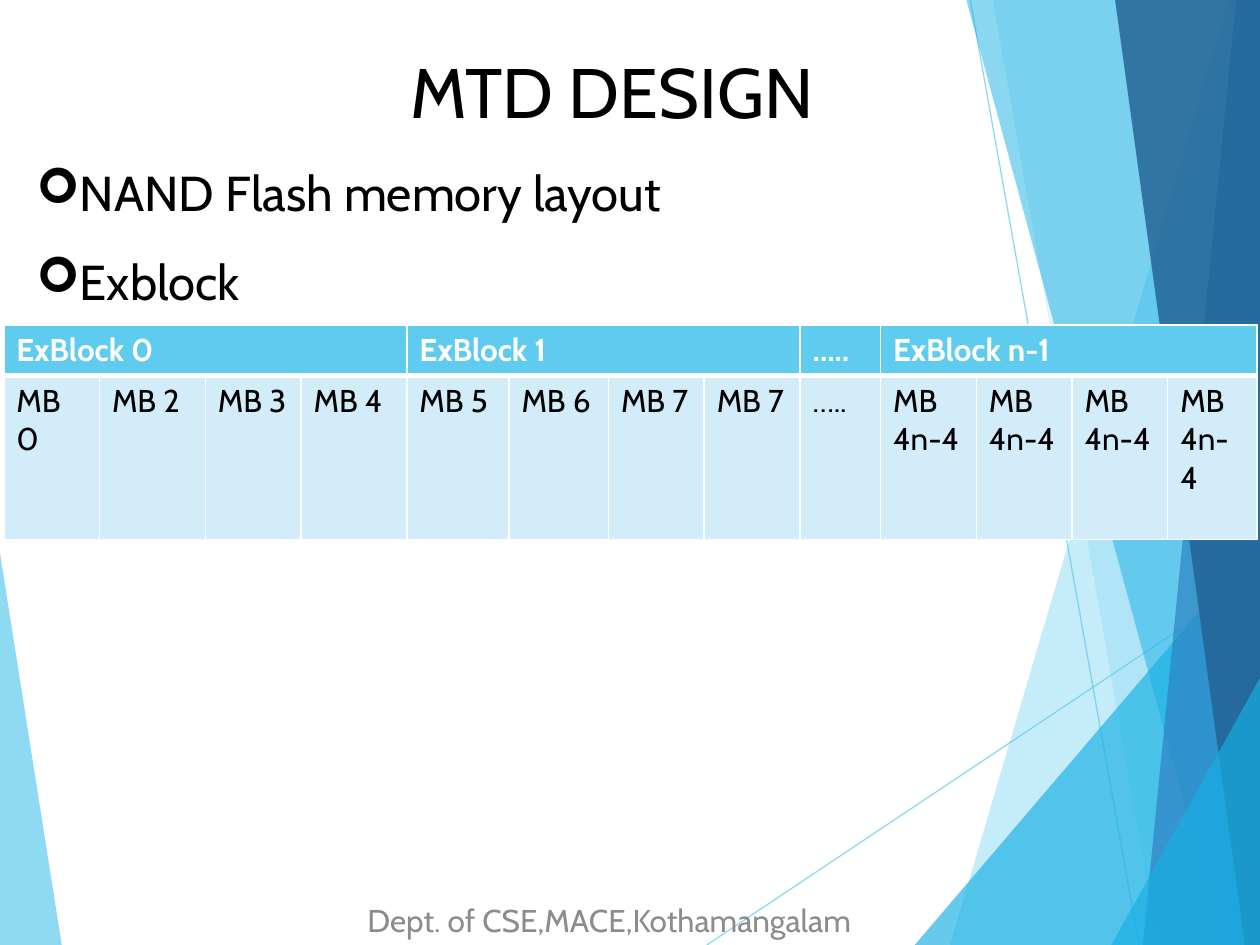
from lxml import etree
from pptx import Presentation
from pptx.dml.color import RGBColor
from pptx.enum.text import MSO_ANCHOR, PP_ALIGN
from pptx.oxml.ns import qn
from pptx.util import Inches, Pt

CENTER, LEFT = PP_ALIGN.CENTER, PP_ALIGN.LEFT
MIDDLE = MSO_ANCHOR.MIDDLE
FONT = "Cabin"
SKY, CYAN, BLUE, NAVY = "5FCBEF", "17B0E4", "2E83C3", "226292"
WHITE, BLACK, GRAY, PALE = "FFFFFF", "000000", "8C8C8C", "D2ECF9"

# Points, colour and opacity of each facet, back to front
FACETS = [
    ([(0, 4.39), (0.49, 7.5), (0, 7.5)], SKY, 70),
    ([(9.75, 0), (7.54, 7.5), (10, 7.5), (10, 0)], SKY, 36),
    ([(7.88, 0), (9.19, 7.5), (10, 7.5), (10, 0)], SKY, 20),
    ([(7.26, 7.5), (10, 4.29), (10, 7.5)], CYAN, 66),
    ([(7.67, 0), (9.7, 7.5), (10, 7.5), (10, 0)], CYAN, 50),
    ([(9.81, 0), (9.07, 7.5), (10, 7.5), (10, 0)], BLUE, 70),
    ([(8.85, 0), (9.88, 7.5), (10, 7.5), (10, 0)], NAVY, 82),
    ([(8.82, 7.5), (10, 5.38), (10, 7.5)], CYAN, 66),
]
RAYS = [(5.61, 7.5, 10, 4.57), (7.7, 0, 9.04, 7.5)]

WIDTHS = [0.76, 0.84, 0.76, 0.84, 0.81, 0.79, 0.76, 0.76, 0.64,
          0.76, 0.76, 0.76, 0.71]
HEIGHTS = [0.4, 1.3]
HEADS = [("ExBlock 0", 4), ("ExBlock 1", 4), ("…..", 1), ("ExBlock n-1", 4)]
BLOCKS = ["MB 0", "MB 2", "MB 3", "MB 4", "MB 5", "MB 6", "MB 7", "MB 7",
          "…..", "MB\n4n-4", "MB 4n-4", "MB 4n-4", "MB 4n-4"]


def paint(fill, color, alpha=100):
    fill.solid()
    fill.fore_color.rgb = RGBColor.from_string(color)
    if alpha < 100:
        tint = fill._xPr.find(qn("a:solidFill"))[0]
        etree.SubElement(tint, qn("a:alpha"), val=str(alpha * 1000))


def style(para, size, color, bold=False, align=LEFT):
    para.alignment = align
    font = para.font
    font.name, font.size, font.bold = FONT, Pt(size), bold
    font.color.rgb = RGBColor.from_string(color)


def place(shape, box):
    shape.left, shape.top, shape.width, shape.height = map(Inches, box)


def add_facet(shapes, points, color, alpha):
    dots = [(Inches(x), Inches(y)) for x, y in points]
    pen = shapes.build_freeform(*dots[0])
    pen.add_line_segments(dots[1:], close=True)
    facet = pen.convert_to_shape()
    facet.shadow.inherit = False
    facet.line.fill.background()
    paint(facet.fill, color, alpha)


def add_ray(shapes, ends):
    ray = shapes.add_connector(1, *map(Inches, ends))
    ray.line.width = Pt(0.75)
    paint(ray.line.fill, SKY, 70)
    etree.SubElement(ray._element.spPr, qn("a:effectLst"))


def add_decor(shapes):
    add_facet(shapes, *FACETS[0])
    for ends in RAYS:
        add_ray(shapes, ends)
    for facet in FACETS[1:]:
        add_facet(shapes, *facet)


def set_title(shapes, text, box):
    title = shapes.title
    place(title, box)
    title.text_frame.text = text
    title.text_frame.vertical_anchor = MIDDLE
    style(title.text_frame.paragraphs[0], 40, BLACK, align=CENTER)
    # Bring the title in front of the decoration
    shapes._spTree.append(title._element)


def add_text(shapes, text, box):
    frame = shapes.add_textbox(*map(Inches, box)).text_frame
    frame.word_wrap = True
    frame.text = text
    return frame


def add_list(shapes, items, box):
    frame = add_text(shapes, "\n".join(items), box)
    for para in frame.paragraphs:
        style(para, 28, BLACK)
        para.line_spacing = 1.5
        props = para._p.get_or_add_pPr()
        props.set("marL", str(Inches(0.31)))
        props.set("indent", str(-Inches(0.31)))
        etree.SubElement(props, qn("a:buFont"), typeface="Wingdings")
        etree.SubElement(props, qn("a:buChar"), char="➢")
        # Bullet marks come before the default run format
        props.append(props.find(qn("a:defRPr")))


def add_footer(shapes, text, box):
    frame = add_text(shapes, text, box)
    frame.vertical_anchor = MIDDLE
    style(frame.paragraphs[0], 18, GRAY, align=CENTER)


def edge(cell, base):
    props = cell._tc.get_or_add_tcPr()
    for side, width in zip("LRTB", (1, 1, 1, base)):
        line = etree.SubElement(props, qn("a:ln" + side), w=str(Pt(width)))
        fill = etree.SubElement(line, qn("a:solidFill"))
        etree.SubElement(fill, qn("a:srgbClr"), val=WHITE)


def set_cell(cell, text, color, bold):
    cell.text = text
    for para in cell.text_frame.paragraphs:
        style(para, 18, color, bold)


def add_layout(shapes, box):
    grid = shapes.add_table(2, len(WIDTHS), *map(Inches, box)).table
    for col, width in zip(grid.columns, WIDTHS):
        col.width = Inches(width)
    for row, height in zip(grid.rows, HEIGHTS):
        row.height = Inches(height)
    # Borders and fills
    for row, color, base in ((0, SKY, 3), (1, PALE, 1)):
        for cell in grid.rows[row].cells:
            edge(cell, base)
            paint(cell.fill, color)
    # Merged block heads
    col = 0
    for text, span in HEADS:
        cell = grid.cell(0, col)
        if span > 1:
            cell.merge(grid.cell(0, col + span - 1))
        set_cell(cell, text, WHITE, True)
        col += span
    # Memory blocks
    for col, text in enumerate(BLOCKS):
        set_cell(grid.cell(1, col), text, BLACK, False)


def main():
    deck = Presentation()
    deck.slide_width, deck.slide_height = Inches(10), Inches(7.5)
    shapes = deck.slides.add_slide(deck.slide_layouts[5]).shapes
    add_decor(shapes)
    set_title(shapes, "MTD DESIGN", (0.19, 0.27, 9.33, 0.9))
    add_list(shapes, ["NAND Flash memory layout", "Exblock"],
             (0.19, 1.01, 9.33, 1.52))
    add_footer(shapes, "Dept. of CSE,MACE,Kothamangalam",
               (0.17, 7.1, 9.33, 0.4))
    add_layout(shapes, (0.03, 2.58, 9.97, 1.7))
    deck.save("out.pptx")


if __name__ == "__main__":
    main()
